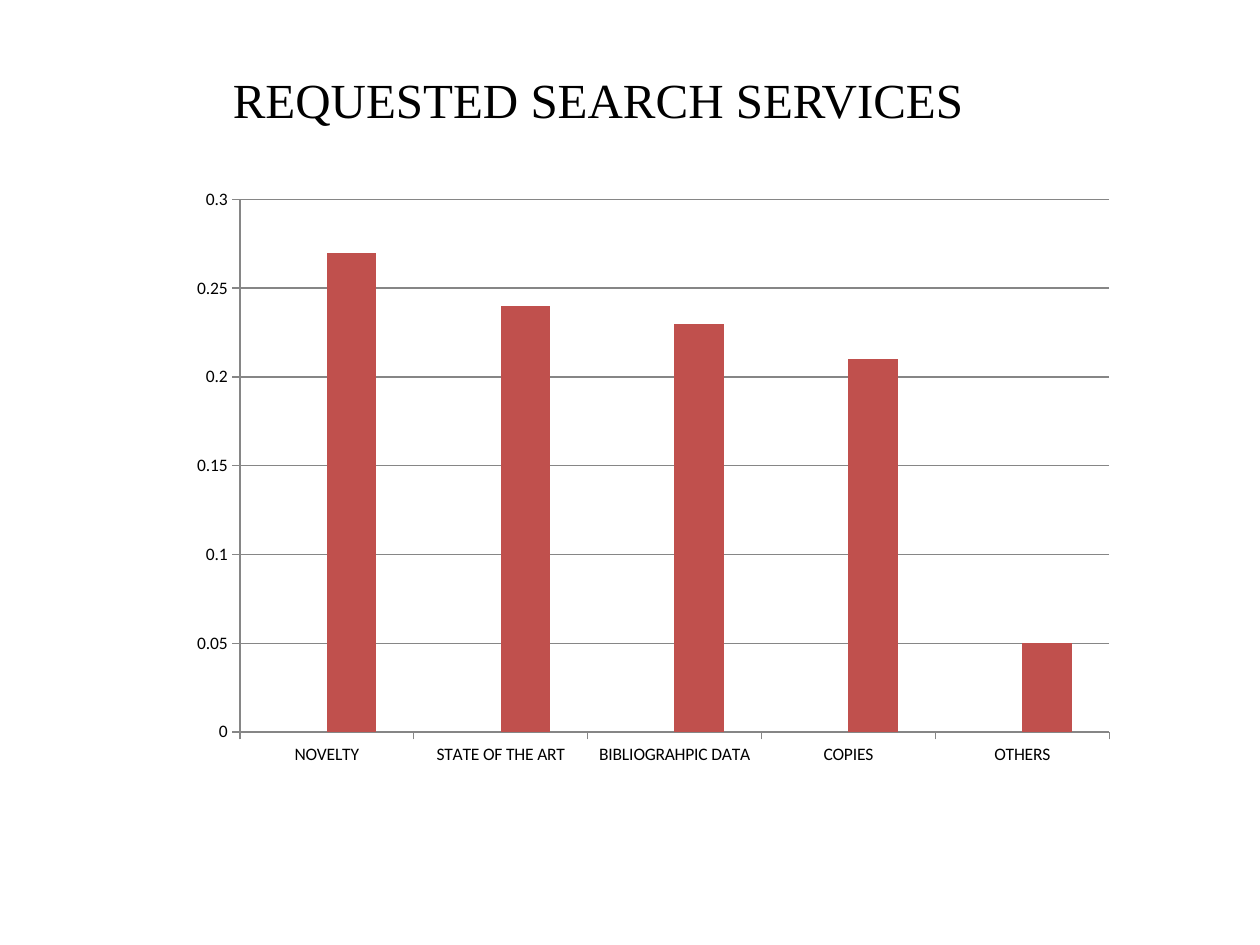
from lxml import etree
from pptx import Presentation, util as u
from pptx.chart.data import CategoryChartData
from pptx.dml.color import RGBColor
from pptx.enum import chart as ch, text as tx
from pptx.oxml.ns import qn

# Content
TITLE = "REQUESTED SEARCH SERVICES"
CATS = ["NOVELTY", "STATE OF THE ART", "BIBLIOGRAHPIC DATA", "COPIES", "OTHERS"]
SERIES = [
    ("Series 1", [None] * len(CATS), "4F81BD"),
    ("Series 2", [0.27, 0.24, 0.23, 0.21, 0.05], "C0504D"),
]
PLOT = {"x": 0.065, "y": 0.035, "w": 0.92, "h": 0.89}  # shares of the chart
GREY = "868686"


def color(code):
    return RGBColor.from_string(code)


def style(font, size, name, code="000000"):
    font.size, font.name = u.Pt(size), name
    font.color.rgb = color(code)


def label(slide, words, box, size=28, name="Times New Roman"):
    frame = slide.shapes.add_textbox(*map(u.Pt, box)).text_frame
    frame.word_wrap = True
    frame.auto_size = tx.MSO_AUTO_SIZE.SHAPE_TO_FIT_TEXT
    run = frame.paragraphs[0].add_run()
    run.text = words
    style(run.font, size, name)


def rule(line):
    line.color.rgb = color(GREY)
    line.width = u.Pt(0.75)


def place(chart):
    """Fix the inner plot area inside the chart."""
    area = chart._chartSpace.chart.plotArea
    for old in area.findall(qn("c:layout")):
        area.remove(old)
    layout = etree.Element(qn("c:layout"))
    area.insert(0, layout)
    man = etree.SubElement(layout, qn("c:manualLayout"))
    parts = [("layoutTarget", "inner"), ("xMode", "edge"), ("yMode", "edge")]
    for tag, val in parts + list(PLOT.items()):
        etree.SubElement(man, qn("c:" + tag)).set("val", str(val))


def columns(slide, box):
    data = CategoryChartData()
    data.categories = CATS
    for name, vals, _ in SERIES:
        data.add_series(name, vals)
    kind = ch.XL_CHART_TYPE.COLUMN_CLUSTERED
    chart = slide.shapes.add_chart(kind, *map(u.Pt, box), data).chart
    chart.has_legend = chart.has_title = False
    style(chart.font, 10, "Calibri")

    # Bars
    plot = chart.plots[0]
    plot.gap_width, plot.overlap, plot.vary_by_categories = 150, 0, False
    for bars, (_, _, code) in zip(plot.series, SERIES):
        bars.format.fill.solid()
        bars.format.fill.fore_color.rgb = color(code)
        bars.invert_if_negative = False

    # Axes
    for axis in (chart.category_axis, chart.value_axis):
        axis.major_tick_mark = ch.XL_TICK_MARK.OUTSIDE
        axis.minor_tick_mark = ch.XL_TICK_MARK.NONE
        rule(axis.format.line)
    scale = chart.value_axis
    scale.minimum_scale, scale.maximum_scale, scale.major_unit = 0, 0.3, 0.05
    scale.has_major_gridlines = True
    rule(scale.major_gridlines.format.line)
    place(chart)


def main():
    deck = Presentation()
    deck.slide_width, deck.slide_height = u.Pt(720), u.Pt(540)
    slide = deck.slides.add_slide(deck.slide_layouts[6])
    columns(slide, (102, 102, 540, 342))
    label(slide, TITLE, (126, 36, 450, 42))
    deck.save("out.pptx")


if __name__ == "__main__":
    main()
